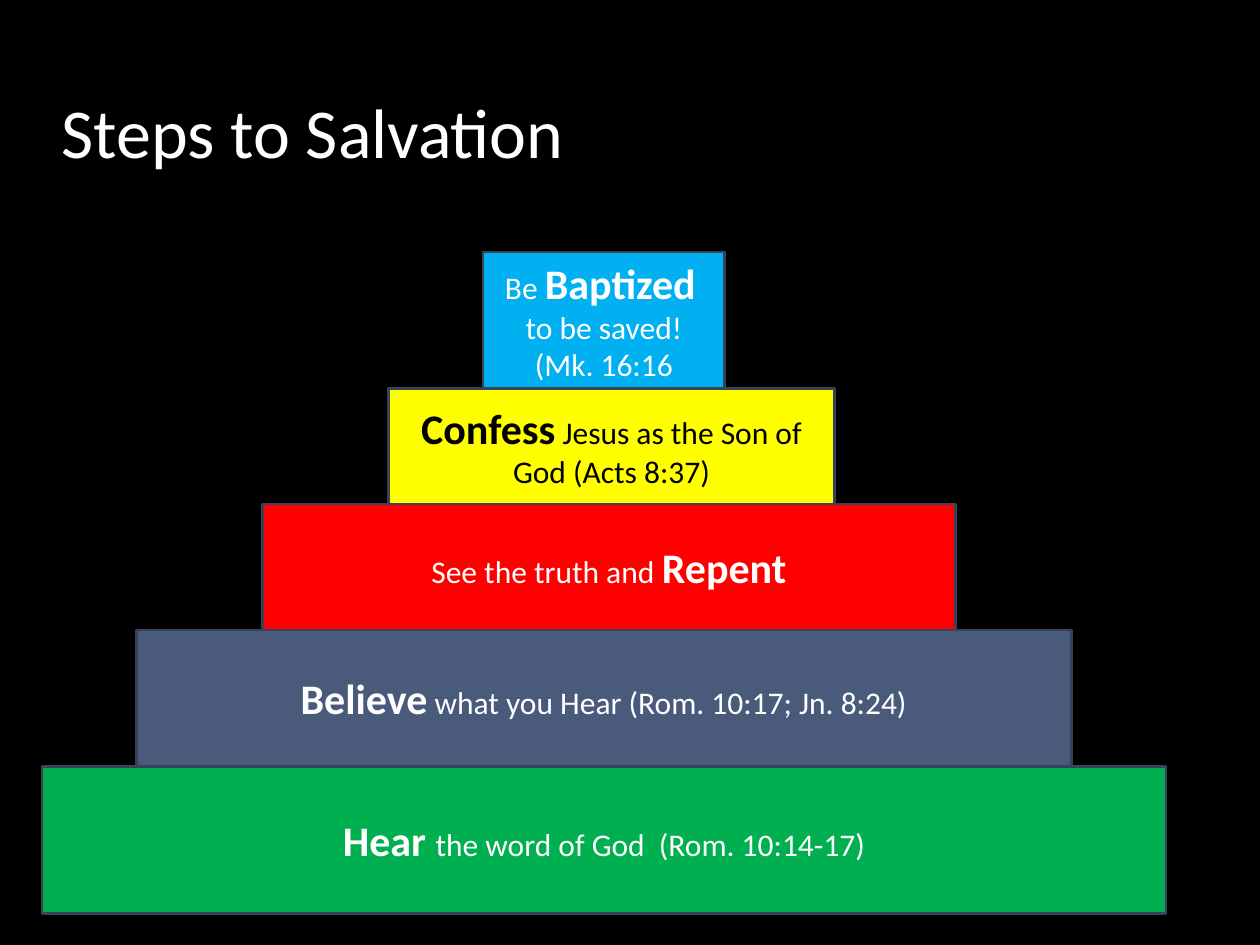
import pptx
import pptx.util
import pptx.dml.color
import pptx.enum.shapes
import pptx.enum.text

Cm = pptx.util.Cm
Pt = pptx.util.Pt
ANCHOR = pptx.enum.text.MSO_ANCHOR
ALIGN = pptx.enum.text.PP_ALIGN

BASE = 18.42
STEPS = [
    (0.85, 22.66, 2.97, "00B050", "FFFFFF",
     [("Hear ", True), ("the word of God  (Rom. 10:14-17)", False)]),
    (2.75, 18.85, 2.75, "4A5A7A", "FFFFFF",
     [("Believe", True), (" what you Hear (Rom. 10:17; Jn. 8:24)", False)]),
    (5.29, 13.97, 2.54, "FF0000", "FFFFFF",
     [("See the truth and ", False), ("Repent", True)]),
    (7.83, 9, 2.33, "FFFF00", "000000",
     [("Confess", True), (" Jesus as the Son of God (Acts 8:37)", False)]),
    (9.74, 4.87, 2.75, "00B0F0", "FFFFFF",
     [("Be ", False), ("Baptized", True), ("  to be saved! (Mk. 16:16", False)]),
]


def paint(target, color):
    """Give a fill a solid colour from a hex string."""
    target.solid()
    target.fore_color.rgb = pptx.dml.color.RGBColor.from_string(color)


def add_run(para, text, size, color, bold=False):
    """Append one styled run to a paragraph."""
    run = para.add_run()
    run.text = text
    run.font.name = "Calibri"
    run.font.size = Pt(size)
    run.font.bold = bold
    paint(run.font.fill, color)


def add_title(slide, text):
    """Place the title above the steps."""
    box = slide.shapes.add_textbox(Cm(0.99), Cm(0.64), Cm(21.34), Cm(2.97))
    frame = box.text_frame
    frame.word_wrap = True
    frame.vertical_anchor = ANCHOR.BOTTOM
    para = frame.paragraphs[0]
    para.space_before = Pt(4)
    add_run(para, text, 40, "FFFFFF")


def add_step(slide, left, top, width, height, fill, ink, words):
    """Draw one step with its key word large and bold."""
    step = slide.shapes.add_shape(
        pptx.enum.shapes.MSO_SHAPE.RECTANGLE,
        Cm(left), Cm(top), Cm(width), Cm(height))
    step.shadow.inherit = False
    paint(step.fill, fill)
    paint(step.line.fill, "37435A")
    step.line.width = Pt(1.5)
    frame = step.text_frame
    frame.word_wrap = True
    frame.vertical_anchor = ANCHOR.MIDDLE
    para = frame.paragraphs[0]
    para.alignment = ALIGN.CENTER
    for text, key in words:
        add_run(para, text, 24 if key else 18, ink, key)


def main():
    """Build the slide, stacking the steps from the bottom up."""
    deck = pptx.Presentation()
    deck.slide_width = Cm(25.4)
    deck.slide_height = Cm(19.05)
    slide = deck.slides.add_slide(deck.slide_layouts[6])
    paint(slide.background.fill, "000000")
    add_title(slide, "Steps to Salvation")
    top = BASE
    for left, width, height, fill, ink, words in STEPS:
        top -= height
        add_step(slide, left, top, width, height, fill, ink, words)
    deck.save("out.pptx")


if __name__ == "__main__":
    main()
